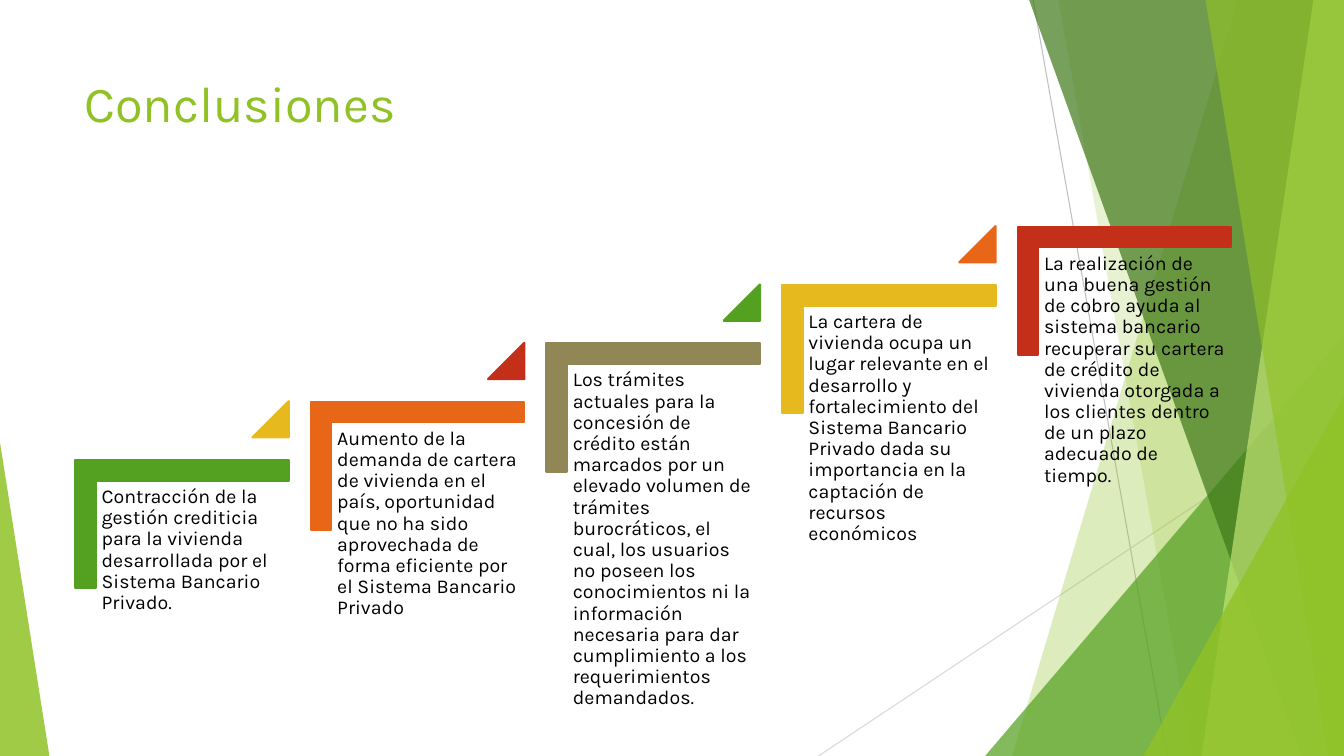
from lxml.etree import SubElement
from pptx import Presentation
from pptx.dml.color import RGBColor
from pptx.enum.shapes import MSO_CONNECTOR as Conn, MSO_SHAPE as Kind
from pptx.enum.text import MSO_ANCHOR as Anchor, PP_ALIGN as Align
from pptx.oxml.ns import qn
from pptx.util import Pt

WIDE, HIGH = 960, 540
GREEN, ORANGE, OLIVE, GOLD, RED = "54A021", "E76618", "918655", "E6B91E", "C42F1A"
LIME, BLACK = "90C226", "000000"

# Step text, bracket colour, colour of the triangle that leads to the next step
STEPS = [
    ("Contracción de la gestión crediticia para la vivienda desarrollada por el "
     "Sistema Bancario Privado.", GREEN, GOLD),
    ("Aumento de la demanda de cartera de vivienda en el país, oportunidad que no ha "
     "sido aprovechada de forma eficiente por el Sistema Bancario Privado", ORANGE, RED),
    ("Los trámites actuales para la concesión de crédito están marcados por un elevado "
     "volumen de trámites burocráticos, el cual, los usuarios no poseen los "
     "conocimientos ni la información necesaria para dar cumplimiento a los "
     "requerimientos demandados.", OLIVE, GREEN),
    ("La cartera de vivienda ocupa un lugar relevante en el desarrollo y fortalecimiento "
     "del Sistema Bancario Privado dada su importancia en la captación de recursos "
     "económicos", GOLD, ORANGE),
    ("La realización de una buena gestión de cobro ayuda al sistema bancario recuperar "
     "su cartera de crédito de vivienda otorgada a los clientes dentro de un plazo "
     "adecuado de tiempo.", RED, None),
]


def color(code):
    return RGBColor.from_string(code)


def paint(shape, code, alpha=None, edge=None):
    shape.shadow.inherit = False
    shape.fill.solid()
    shape.fill.fore_color.rgb = color(code)
    if alpha is not None:
        tint = shape._element.spPr.find(qn("a:solidFill"))[0]
        SubElement(tint, qn("a:alpha")).set("val", str(alpha * 1000))
    if edge:
        shape.line.color.rgb = color(code)
        shape.line.width = Pt(edge)
    else:
        shape.line.fill.background()


def add_kind(slide, kind, x, y, w, h, adjust):
    shape = slide.shapes.add_shape(kind, Pt(x), Pt(y), Pt(w), Pt(h))
    for i, value in enumerate(adjust):
        shape.adjustments[i] = value
    return shape


def add_text(slide, box, text, size, code, inset, space=1.0):
    x, y, w, h = box
    frame = slide.shapes.add_textbox(Pt(x), Pt(y), Pt(w), Pt(h)).text_frame
    frame.word_wrap = True
    frame.vertical_anchor = Anchor.TOP
    frame.margin_left = frame.margin_right = Pt(inset[0])
    frame.margin_top = frame.margin_bottom = Pt(inset[1])
    para = frame.paragraphs[0]
    para.alignment = Align.LEFT
    para.line_spacing = space
    run = para.add_run()
    run.text = text
    run.font.name = "Karla"
    run.font.size = Pt(size)
    run.font.color.rgb = color(code)


def add_line(slide, start, end, code):
    line = slide.shapes.add_connector(Conn.STRAIGHT, *map(Pt, start + end))
    line.line.color.rgb = color(code)
    line.line.width = Pt(0.75)
    SubElement(line._element.spPr, qn("a:effectLst"))


def add_facet(slide, box, top, low, code, alpha):
    """Band running from its top edge to its low edge along the right of the box."""
    x, y, w, h = box
    right, base = x + w, y + h
    form = slide.shapes.build_freeform(Pt(top), Pt(y), scale=1.0)
    corners = [(right, y), (right, base), (low, base)]
    form.add_line_segments([(Pt(a), Pt(b)) for a, b in corners], close=True)
    paint(form.convert_to_shape(), code, alpha)


def add_wedge(slide, box, w, h, code, alpha, side=1):
    """Right triangle in the lower corner of the box: side 0 left, 1 right."""
    x, y, wide, high = box
    left = x + side * (wide - w)
    paint(add_kind(slide, Kind.ISOSCELES_TRIANGLE, left, y + high - h, w, h, [side]),
          code, alpha)


def add_decor(slide, box):
    x, y, w, h = box
    right, base = x + w, y + h
    # Thin lines
    add_line(slide, (x + 738, y), (x + 833.76, base), "BFBFBF")
    add_line(slide, (right, y + 290.16), (x + 584.64, base), "D9D9D9")
    # Overlapping translucent facets
    add_facet(slide, box, x + 884.16, x + 722.88, LIME, 30)
    add_facet(slide, box, x + 756, x + 851.76, LIME, 20)
    add_wedge(slide, box, 256.32, 300.24, GREEN, 72)
    add_facet(slide, box, x + 735.12, x + 929.52, "3F7819", 70)
    add_facet(slide, box, x + 938.16, x + 858.24, "C0E474", 70)
    add_facet(slide, box, x + 861.12, x + 948.96, LIME, 65)
    add_wedge(slide, box, 143.28, 257.04, LIME, 80)
    add_wedge(slide, box, 35.28, 223.92, LIME, 85, side=0)


def add_step(slide, box, text, code, next_code):
    x, y, w, h = box
    # Bracket: an L turned a quarter, so width and height swap
    turn = (w - h) / 2
    corner = add_kind(slide, Kind.CORNER, x + turn, y - turn, h, w, [0.161, 0.161])
    corner.rotation = 90
    paint(corner, code, edge=1.5)
    # Wording
    pad = 14.76
    add_text(slide, (x + pad, y + pad, w - pad, 120.24), text, 14, BLACK, (4.2, 4.2), 0.9)
    # Triangle towards the next step
    if next_code:
        size = 25.92
        mark = add_kind(slide, Kind.ISOSCELES_TRIANGLE, x + w - size, y - 42.1,
                        size, size, [1])
        paint(mark, next_code, edge=1.5)


def add_stairs(slide, box):
    x, y, w, h = box
    wide, high = 152.64, 91.44
    across = (w - wide) / (len(STEPS) - 1)
    rise = (h - high) / (len(STEPS) - 1)
    for i, step in enumerate(STEPS):
        place = (x + i * across, y + h - high - i * rise, wide, high)
        add_step(slide, place, *step)


def main():
    deck = Presentation()
    deck.slide_width, deck.slide_height = Pt(WIDE), Pt(HIGH)
    slide = deck.slides.add_slide(deck.slide_layouts[6])
    add_decor(slide, (0, 0, WIDE, HIGH))
    add_text(slide, (53.28, 48.24, 676.8, 103.68), "Conclusiones", 36, LIME, (7.2, 3.6))
    add_stairs(slide, (53.64, 162, 825.84, 258.12))
    deck.save("out.pptx")


if __name__ == "__main__":
    main()
